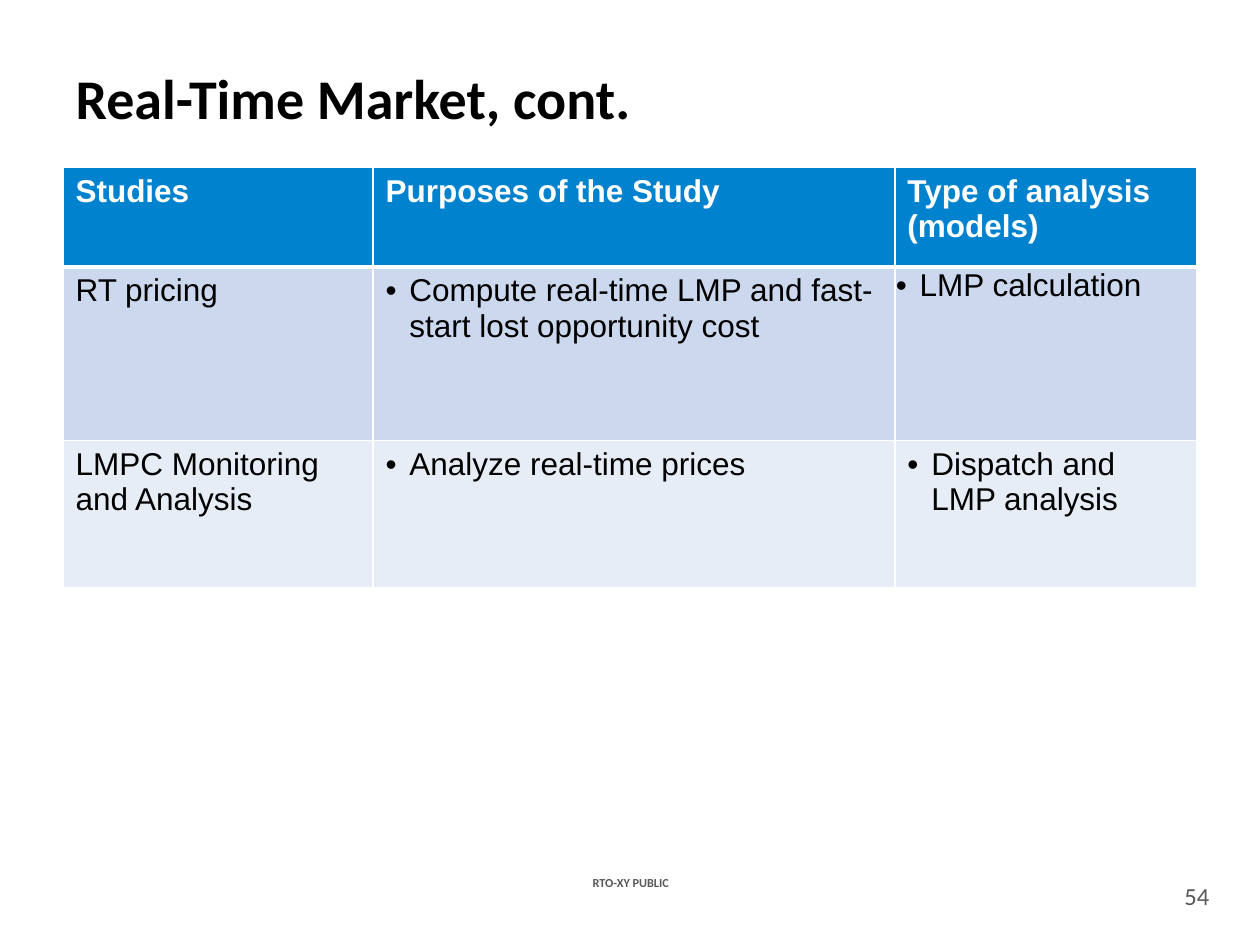
"""Builds the real-time market studies slide."""
import lxml.etree
import pptx
import pptx.dml.color
import pptx.enum.text
import pptx.oxml.ns
import pptx.util

Cm = pptx.util.Cm
ALIGN = pptx.enum.text.PP_ALIGN
MIDDLE = pptx.enum.text.MSO_ANCHOR.MIDDLE

TITLE = "Real-Time Market, cont."
HEADER = ["Studies", "Purposes of the Study", "Type of analysis\n(models)"]
STUDIES = [
    ["RT pricing",
     "Compute real-time LMP and fast-start lost opportunity cost",
     "LMP calculation"],
    ["LMPC Monitoring and Analysis",
     "Analyze real-time prices",
     "Dispatch and LMP analysis"],
]
CLASSIFICATION = "RTO-XY PUBLIC"
PAGE_NUMBER = "54"

THEME = {
    "fills": ["0082CF", "CCD8ED", "E7EDF6"],
    "border": "FFFFFF",
    "title": {"name": "Calibri", "size": 32, "bold": True, "color": "000000"},
    "header": {"name": "Arial", "size": 18, "bold": True, "color": "FFFFFF"},
    "body": {"name": "Arial", "size": 18, "bold": False, "color": "000000"},
    "label": {"name": "Calibri", "size": 7, "bold": True, "color": "595959"},
    "number": {"name": "Calibri", "size": 14, "bold": False, "color": "595959"},
}
COLUMN_WIDTHS = [6.25, 10.52, 6.09]
ROW_HEIGHTS = [2.0, 3.5, 2.97]
BULLET_INDENT = Cm(0.48)
TIGHT_MARGINS = {"margin_left": Cm(0.02), "margin_top": Cm(0.02),
                 "margin_right": Cm(0.02), "margin_bottom": 0}
NO_MARGINS = dict.fromkeys(TIGHT_MARGINS, 0)


def set_attributes(target, values):
    for name, value in values.items():
        setattr(target, name, value)


def add_element(parent, tag, **attributes):
    return lxml.etree.SubElement(parent, pptx.oxml.ns.qn(tag), attributes)


def write(frame, text, style, align=ALIGN.LEFT, bulleted=False):
    for index, line in enumerate(text.split("\n")):
        para = frame.add_paragraph() if index else frame.paragraphs[0]
        para.alignment = align
        if bulleted:
            properties = para._p.get_or_add_pPr()
            properties.set("marL", str(BULLET_INDENT))
            properties.set("indent", str(-BULLET_INDENT))
            add_element(properties, "a:buFont", typeface="Arial")
            add_element(properties, "a:buChar", char="•")
        span = para.add_run()
        span.text = line
        set_attributes(span.font, {"name": style["name"], "bold": style["bold"],
                                   "size": pptx.util.Pt(style["size"])})
        span.font.color.rgb = pptx.dml.color.RGBColor.from_string(style["color"])


def add_borders(cell, row):
    widths = {"L": 1, "R": 1, "T": 3 if row == 1 else 1, "B": 3 if row == 0 else 1}
    for side, width in widths.items():
        line = add_element(cell._tc.get_or_add_tcPr(), f"a:ln{side}",
                           w=str(pptx.util.Pt(width)))
        add_element(add_element(line, "a:solidFill"), "a:srgbClr", val=THEME["border"])


def add_label(page, bounds, text, style):
    box = page.shapes.add_textbox(*map(Cm, bounds))
    set_attributes(box.text_frame,
                   {"word_wrap": True, "vertical_anchor": MIDDLE, **NO_MARGINS})
    write(box.text_frame, text, style, ALIGN.CENTER)


def add_studies_table(page):
    rows = [HEADER, *STUDIES]
    frame = page.shapes.add_table(len(rows), len(HEADER), Cm(1.27), Cm(3.38),
                                  Cm(sum(COLUMN_WIDTHS)), Cm(sum(ROW_HEIGHTS)))
    table = frame.table
    for column, width in zip(table.columns, COLUMN_WIDTHS):
        column.width = Cm(width)
    for row, height in zip(table.rows, ROW_HEIGHTS):
        row.height = Cm(height)
    for row, texts in enumerate(rows):
        for column, text in enumerate(texts):
            cell = table.cell(row, column)
            add_borders(cell, row)
            cell.fill.solid()
            cell.fill.fore_color.rgb = pptx.dml.color.RGBColor.from_string(
                THEME["fills"][row])
            write(cell.text_frame, text, THEME["body" if row else "header"],
                  bulleted=row > 0 and column > 0)
    set_attributes(table.cell(1, 2), TIGHT_MARGINS)


def main():
    deck = pptx.Presentation()
    set_attributes(deck, {"slide_width": Cm(25.4), "slide_height": Cm(19.05)})
    page = deck.slides.add_slide(deck.slide_layouts[5])
    title = page.shapes.title
    set_attributes(title, {"left": Cm(1.27), "top": Cm(0.76),
                           "width": Cm(22.86), "height": Cm(2.41)})
    title.text_frame.vertical_anchor = MIDDLE
    write(title.text_frame, TITLE, THEME["title"])
    add_studies_table(page)
    add_label(page, (10.85, 17.58, 3.73, 0.43), CLASSIFICATION, THEME["label"])
    add_label(page, (23.7, 17.68, 0.86, 0.74), PAGE_NUMBER, THEME["number"])
    deck.save("out.pptx")


if __name__ == "__main__":
    main()
